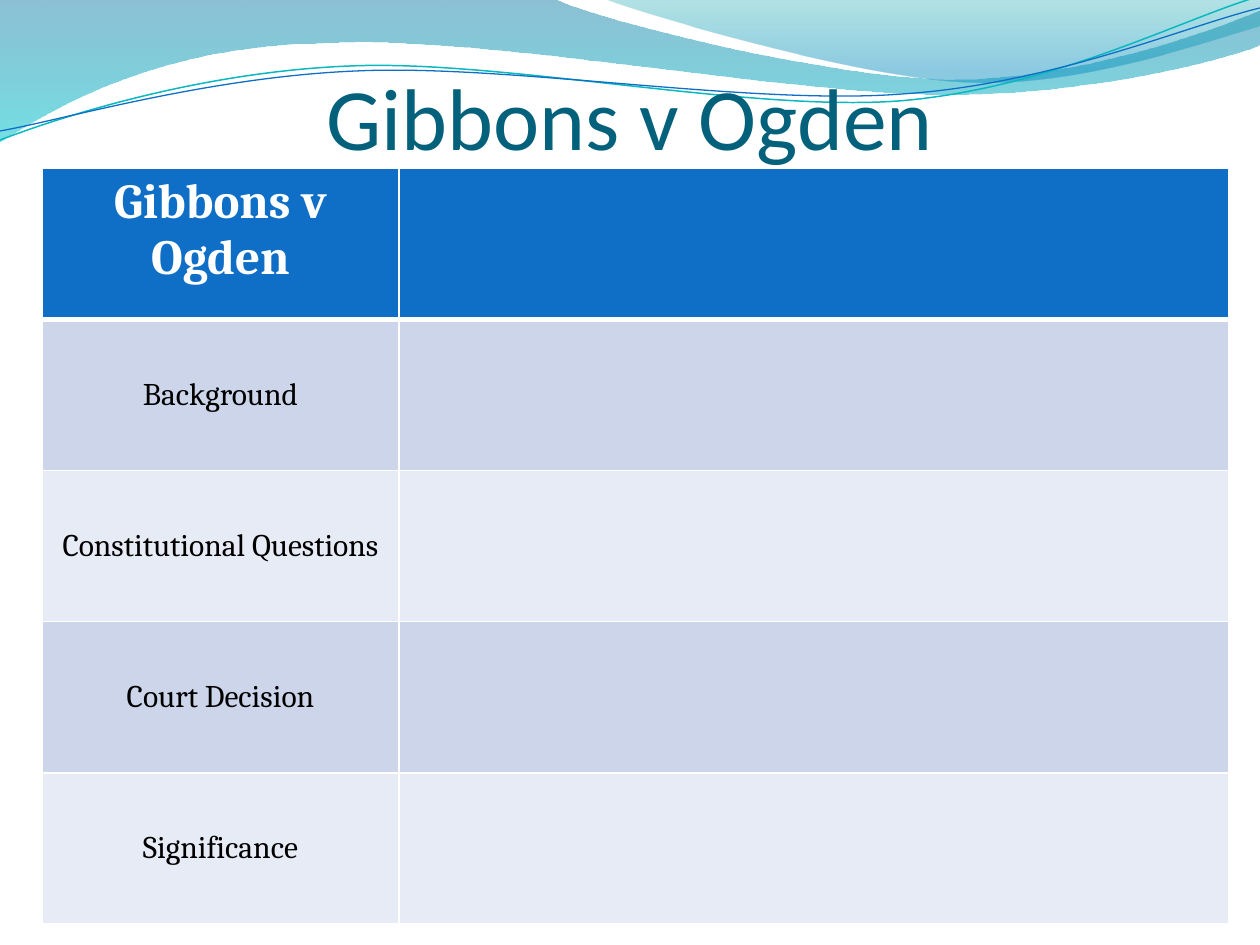
from lxml import etree
from pptx import Presentation
from pptx.dml.color import RGBColor
from pptx.enum import text
from pptx.oxml.ns import qn
from pptx.util import Emu, Pt

PX = 914400 / 126
COLORS = {
    "title": "04617B", "header": "0F6FC6", "odd": "CCD5EA", "even": "E7EBF5",
    "white": "FFFFFF", "black": "000000",
    "band_top": "0074A1", "band_bottom": "00C6CF",
    "crest_top": "00A1A9", "crest_bottom": "008BBF",
    "teal": "0AB8BF", "blue": "0F6FC6",
}


def write(frame, words, size, font, color, bold=False, anchor="TOP"):
    frame.text = words
    frame.word_wrap = True
    frame.vertical_anchor = getattr(text.MSO_ANCHOR, anchor)
    paragraph = frame.paragraphs[0]
    paragraph.alignment = text.PP_ALIGN.CENTER
    style = paragraph.runs[0].font
    style.size, style.name, style.bold = Pt(size), font, bold
    style.color.rgb = RGBColor.from_string(COLORS[color])


def draw_wave(shapes, start, segments, closed):
    """Segments hold one point (line) or three (cubic Bezier curve)."""
    builder = shapes.build_freeform(*start, scale=PX)
    builder.add_line_segments([p for segment in segments for p in segment], close=closed)
    wave = builder.convert_to_shape()
    wave.shadow.inherit = False
    lines = iter(list(wave._element.iter(qn("a:lnTo"))))
    for segment in segments:
        first, *others = [next(lines) for _ in segment]
        if others:
            curve = etree.Element(qn("a:cubicBezTo"))
            first.addprevious(curve)
            for line in (first, *others):
                curve.append(line[0])
                line.getparent().remove(line)
    return wave


prs = Presentation()
prs.slide_width, prs.slide_height = Emu(round(1260 * PX)), Emu(round(945 * PX))
slide = prs.slides.add_slide(prs.slide_layouts[5])

# Filled waves: start, segments, gradient stops (position, colour, opacity %)
filled_waves = [
    ((0, 0), [
        [(554, -1)],
        [(600, 21), (837, 79), (955, 79)],
        [(1075, 79), (1207, 33), (1260, 11)],
        [(1261, 45)],
        [(1239, 55), (1096, 96), (940, 94)],
        [(784, 94), (481, 35), (324, 43)],
        [(163, 45), (58, 105), (-1, 142)],
    ], [(0, "band_top", 45), (1, "band_bottom", 55)]),
    ((604, -1), [
        [(641, 14), (859, 78), (969, 82)],
        [(1079, 87), (1211, 40), (1260, 26)],
        [(1260, 0)],
    ], [(0, "crest_top", 30), (0.8, "crest_bottom", 45)]),
]
for start, segments, stops in filled_waves:
    wave = draw_wave(slide.shapes, start, segments, True)
    wave.line.fill.background()
    wave.fill.gradient()
    wave.fill.gradient_angle = 270
    for stop, (position, color, _) in zip(wave.fill.gradient_stops, stops):
        stop.position = position
        stop.color.rgb = RGBColor.from_string(COLORS[color])
    for node, (_, _, opacity) in zip(wave._element.spPr.iter(qn("a:srgbClr")), stops):
        etree.SubElement(node, qn("a:alpha"), val=str(opacity * 1000))

wave_lines = [
    ((0, 140), [
        [(60, 117), (199, 72), (349, 66)],
        [(498, 59), (747, 112), (898, 101)],
        [(1050, 89), (1182, 19), (1257, -3)],
    ], "teal", 0.85),
    ((0, 131), [
        [(59, 121), (207, 77), (357, 71)],
        [(508, 64), (752, 106), (903, 94)],
        [(1053, 84), (1186, 26), (1260, 8)],
    ], "blue", 0.75),
]
for start, segments, color, width in wave_lines:
    wave = draw_wave(slide.shapes, start, segments, False)
    wave.fill.background()
    wave.line.color.rgb = RGBColor.from_string(COLORS[color])
    wave.line.width = Pt(width)

title = slide.shapes.title
slide.shapes._spTree.append(title._element)  # in front of the waves
title.left, title.top, title.width, title.height = (
    Emu(round(n * PX)) for n in (63, 53, 1134, 115))
frame = title.text_frame
frame.auto_size = text.MSO_AUTO_SIZE.NONE
frame.margin_left = frame.margin_right = frame.margin_bottom = 0
frame.margin_top = Emu(round(6 * PX))
write(frame, "Gibbons v Ogden", size=50, font="Calibri", color="title", anchor="BOTTOM")

topics = ["Gibbons v Ogden", "Background", "Constitutional Questions",
          "Court Decision", "Significance"]
column_widths = (357, 830)
table_height = 756
case_table = slide.shapes.add_table(
    len(topics), 2, *(Emu(round(n * PX)) for n in
                      (42, 168, sum(column_widths), table_height))).table
for column, width in zip(case_table.columns, column_widths):
    column.width = Emu(round(width * PX))

for row, topic in enumerate(topics):
    case_table.rows[row].height = Emu(round(table_height / len(topics) * PX))
    for col in range(2):
        cell = case_table.cell(row, col)
        properties = cell._tc.get_or_add_tcPr()
        for side in ("L", "R", "T", "B"):
            thick = (row, side) in ((0, "B"), (1, "T"))
            border = etree.SubElement(properties, qn(f"a:ln{side}"),
                                      w=str(Pt(3 if thick else 1)))
            solid = etree.SubElement(border, qn("a:solidFill"))
            etree.SubElement(solid, qn("a:srgbClr"), val=COLORS["white"])
        cell.fill.solid()
        shade = "header" if row == 0 else "odd" if row % 2 else "even"
        cell.fill.fore_color.rgb = RGBColor.from_string(COLORS[shade])
    heading = case_table.cell(row, 0).text_frame
    if row == 0:
        write(heading, topic, size=28, font="Cambria", color="white", bold=True)
    else:
        write(heading, topic, size=18, font="Cambria", color="black")
        case_table.cell(row, 0).vertical_anchor = text.MSO_ANCHOR.MIDDLE

prs.save("out.pptx")
